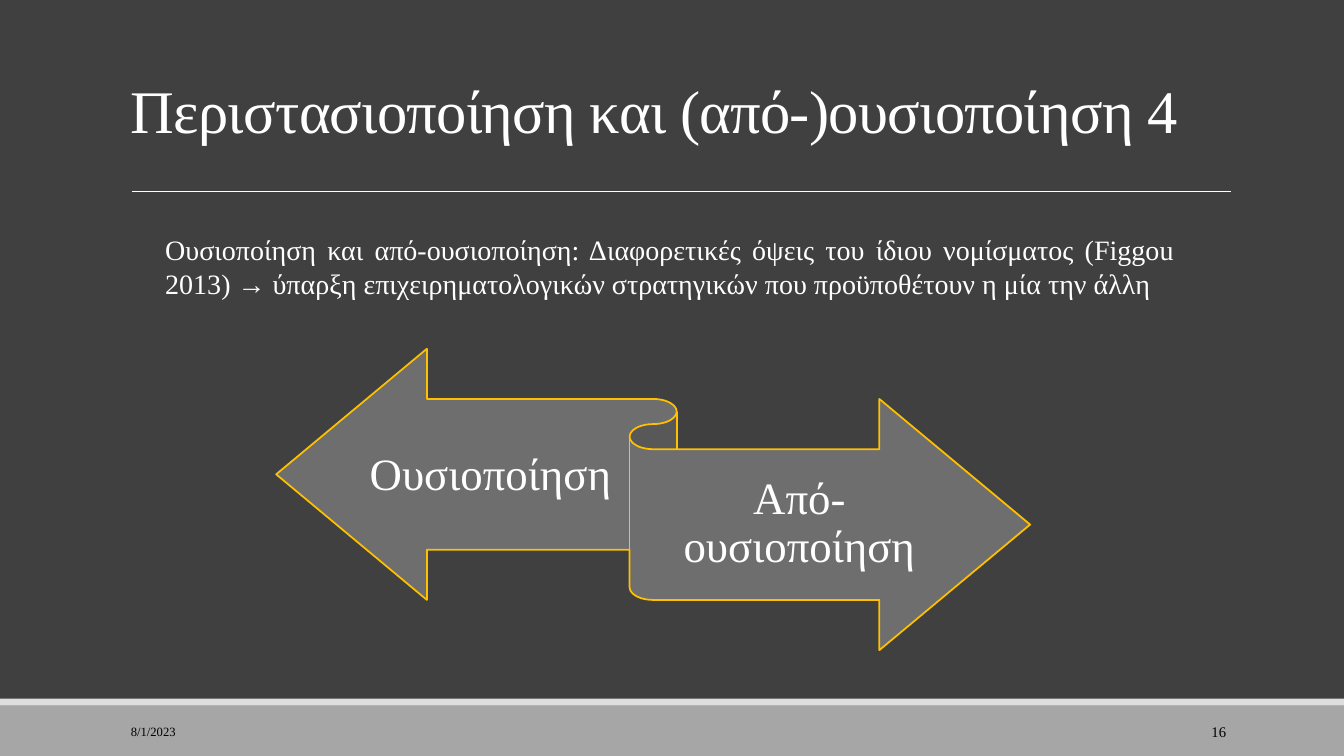
from dataclasses import dataclass

from lxml.etree import SubElement
from pptx import Presentation
from pptx.dml.color import RGBColor
from pptx.enum.shapes import MSO_CONNECTOR, MSO_SHAPE
from pptx.enum.text import MSO_ANCHOR as ANCHOR, PP_ALIGN as ALIGN
from pptx.oxml.ns import qn
from pptx.util import Emu, Inches, Pt

FONT = "Times New Roman"
WHITE, BLACK, GOLD = "FFFFFF", "000000", "FFC000"

prs = Presentation()
prs.slide_width, prs.slide_height = Inches(13.33), Inches(7.5)
s = prs.slides.add_slide(prs.slide_layouts[6])


@dataclass(frozen=True)
class Box:
    """Left, top, width and height in percent of the slide."""
    left: float
    top: float
    width: float
    height: float

    def emu(self) -> tuple[Emu, Emu, Emu, Emu]:
        return across(self.left), down(self.top), across(self.width), down(self.height)


@dataclass(frozen=True)
class Shape:
    kind: MSO_SHAPE
    box: Box
    fill: str
    line: str | None = None


@dataclass(frozen=True)
class Text:
    text: str
    box: Box
    size: float
    color: str = WHITE
    align: ALIGN = ALIGN.LEFT
    anchor: ANCHOR = ANCHOR.MIDDLE
    line_spacing: float = 1.0
    tracking: int = 0
    insets: tuple[float, float, float, float] = (0.1, 0.05, 0.1, 0.05)


def across(share: float) -> Emu:
    return Emu(round(prs.slide_width * share / 100))


def down(share: float) -> Emu:
    return Emu(round(prs.slide_height * share / 100))


def rgb(value: str) -> RGBColor:
    return RGBColor.from_string(value)


def draw_shape(item: Shape) -> None:
    sp = s.shapes.add_shape(item.kind, *item.box.emu())
    sp.shadow.inherit = False
    sp.fill.solid()
    sp.fill.fore_color.rgb = rgb(item.fill)
    if item.line:
        sp.line.color.rgb = rgb(item.line)
        sp.line.width = Pt(1.25)
    else:
        sp.line.fill.background()


def draw_rule(left: float, right: float, top: float) -> None:
    ends = across(left), down(top), across(right), down(top)
    cxn = s.shapes.add_connector(MSO_CONNECTOR.STRAIGHT, *ends)
    cxn.line.color.rgb = rgb(WHITE)
    cxn.line.width = Pt(0.5)
    SubElement(cxn._element.spPr, qn("a:effectLst"))


def draw_text(item: Text) -> None:
    tf = s.shapes.add_textbox(*item.box.emu()).text_frame
    tf.word_wrap = True
    tf.vertical_anchor = item.anchor
    insets = [Inches(side) for side in item.insets]
    tf.margin_left, tf.margin_top, tf.margin_right, tf.margin_bottom = insets
    tf.text = item.text
    p = tf.paragraphs[0]
    p.alignment = item.align
    p.line_spacing = item.line_spacing
    r = p.runs[0]
    r.font.name = FONT
    r.font.size = Pt(item.size)
    r.font.color.rgb = rgb(item.color)
    if item.tracking:
        r._r.get_or_add_rPr().set("spc", str(item.tracking))


def ribbon_label(text: str, box: Box) -> Text:
    return Text(text, box, 32, align=ALIGN.CENTER, line_spacing=0.9,
                insets=(0, 0.12, 0, 0.13))


SHAPES = [
    Shape(MSO_SHAPE.RECTANGLE, Box(0, 93.33, 100, 6.67), "A6A6A6"),
    Shape(MSO_SHAPE.RECTANGLE, Box(0, 92.4, 100, 0.93), "DDDDDD"),
    Shape(MSO_SHAPE.LEFT_RIGHT_RIBBON, Box(20.55, 46.13, 56.1, 39.87), "6E6E6E", GOLD),
]

TEXTS = [
    Text("Περιστασιοποίηση και (από-)ουσιοποίηση 4", Box(9, 4.13, 85.05, 15.87), 43.2,
         anchor=ANCHOR.BOTTOM, line_spacing=0.85, tracking=-50),
    Text("Ουσιοποίηση και από-ουσιοποίηση: Διαφορετικές όψεις του ίδιου νομίσματος "
         "(Figgou 2013) → ύπαρξη επιχειρηματολογικών στρατηγικών που προϋποθέτουν "
         "η μία την άλλη", Box(11.55, 30.13, 76.58, 10.27), 20,
         align=ALIGN.JUSTIFY, anchor=ANCHOR.TOP),
    ribbon_label("Ουσιοποίηση", Box(27.23, 53.2, 18.53, 19.6)),
    ribbon_label("Από-ουσιοποίηση", Box(48.53, 59.6, 21.9, 19.6)),
    Text("8/1/2023", Box(9, 94.13, 20.25, 5.33), 9, BLACK),
    Text("16", Box(81.23, 94.13, 10.73, 5.33), 10.5, BLACK, ALIGN.RIGHT),
]


def main() -> None:
    s.background.fill.solid()
    s.background.fill.fore_color.rgb = rgb("404040")
    for item in SHAPES:
        draw_shape(item)
    draw_rule(9.83, 91.58, 25.33)
    for item in TEXTS:
        draw_text(item)
    prs.save("out.pptx")


if __name__ == "__main__":
    main()
